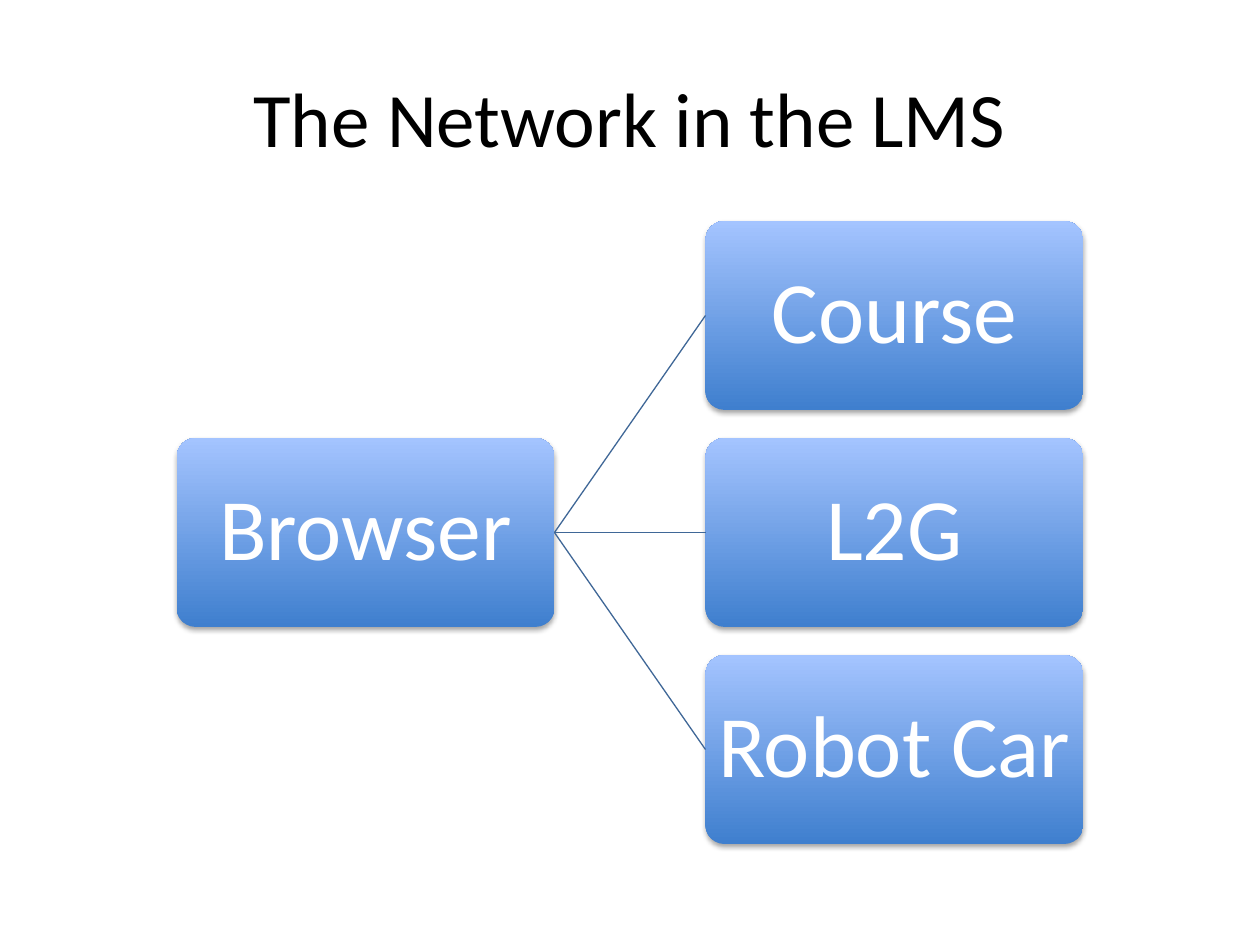
from dataclasses import dataclass

from lxml import etree
from pptx import Presentation
from pptx.dml.color import RGBColor
from pptx.enum.shapes import MSO_CONNECTOR, MSO_SHAPE
from pptx.enum.text import MSO_ANCHOR, PP_ALIGN
from pptx.oxml.ns import qn
from pptx.util import Pt

ROUNDED = MSO_SHAPE.ROUNDED_RECTANGLE
STRAIGHT = MSO_CONNECTOR.STRAIGHT
CENTER = PP_ALIGN.CENTER
MIDDLE = MSO_ANCHOR.MIDDLE
TITLE_ONLY = 5
LEFT, RIGHT = 1, 3


@dataclass(frozen=True)
class Theme:
    font: str = "Calibri"
    title_color: str = "000000"
    node_color: str = "FFFFFF"
    node_bottom: str = "3F7FCE"
    node_top: str = "A4C4FF"
    link: str = "3F6797"
    title_size: float = 44
    node_size: float = 50


THEME = Theme()


def write(tf, text, *, size, color, spacing=None):
    tf.word_wrap = True
    tf.vertical_anchor = MIDDLE
    p = tf.paragraphs[0]
    p.alignment = CENTER
    p.line_spacing = spacing
    r = p.add_run()
    r.text = text
    r.font.name = THEME.font
    r.font.size = Pt(size)
    r.font.color.rgb = RGBColor.from_string(color)


def add_soft_shadow(sp):
    sp.shadow.inherit = False
    effects = sp._element.spPr.find(qn("a:effectLst"))
    shadow = etree.SubElement(
        effects, qn("a:outerShdw"), blurRad=str(Pt(3.1)), dist=str(Pt(1.8)),
        dir="5400000", rotWithShape="0")
    color = etree.SubElement(shadow, qn("a:srgbClr"), val="000000")
    etree.SubElement(color, qn("a:alpha"), val="35000")


def add_title(s, text, x, y, w, h):
    sp = s.shapes.title
    sp.left, sp.top, sp.width, sp.height = Pt(x), Pt(y), Pt(w), Pt(h)
    write(sp.text_frame, text, size=THEME.title_size, color=THEME.title_color)


def add_node(s, text, x, y, w, h):
    sp = s.shapes.add_shape(ROUNDED, Pt(x), Pt(y), Pt(w), Pt(h))
    sp.adjustments[0] = 0.1
    sp.fill.gradient()
    sp.fill.gradient_angle = 90
    for stop, color in zip(sp.fill.gradient_stops,
                           (THEME.node_bottom, THEME.node_top)):
        stop.color.rgb = RGBColor.from_string(color)
    sp.line.fill.background()
    add_soft_shadow(sp)
    tf = sp.text_frame
    tf.margin_left = tf.margin_right = tf.margin_top = tf.margin_bottom = Pt(2)
    write(tf, text, size=THEME.node_size, color=THEME.node_color, spacing=0.9)
    return sp


def add_link(s, start, end):
    link = s.shapes.add_connector(STRAIGHT, 0, 0, 0, 0)
    link.begin_connect(start, RIGHT)
    link.end_connect(end, LEFT)
    link.line.color.rgb = RGBColor.from_string(THEME.link)
    link.line.width = Pt(0.75)
    etree.SubElement(link._element.spPr, qn("a:effectLst"))


def add_tree(s, root, leaves, x, y, w, h):
    """Place the root at the left, joined to a column of leaves at the right."""
    node_w = w / 2.4
    node_h = node_w / 2
    step = (h - node_h) / (len(leaves) - 1)
    root_node = add_node(s, root, x, y + (h - node_h) / 2, node_w, node_h)
    for i, leaf in enumerate(leaves):
        node = add_node(s, leaf, x + w - node_w, y + i * step, node_w, node_h)
        add_link(s, root_node, node)


def main():
    prs = Presentation()
    prs.slide_width, prs.slide_height = Pt(720), Pt(540)
    s = prs.slides.add_slide(prs.slide_layouts[TITLE_ONLY])
    add_title(s, "The Network in the LMS", 36, 21.6, 648, 90)
    add_tree(s, "Browser", ["Course", "L2G", "Robot Car"],
             101, 126.3, 518, 356)
    prs.save("out.pptx")


if __name__ == "__main__":
    main()
